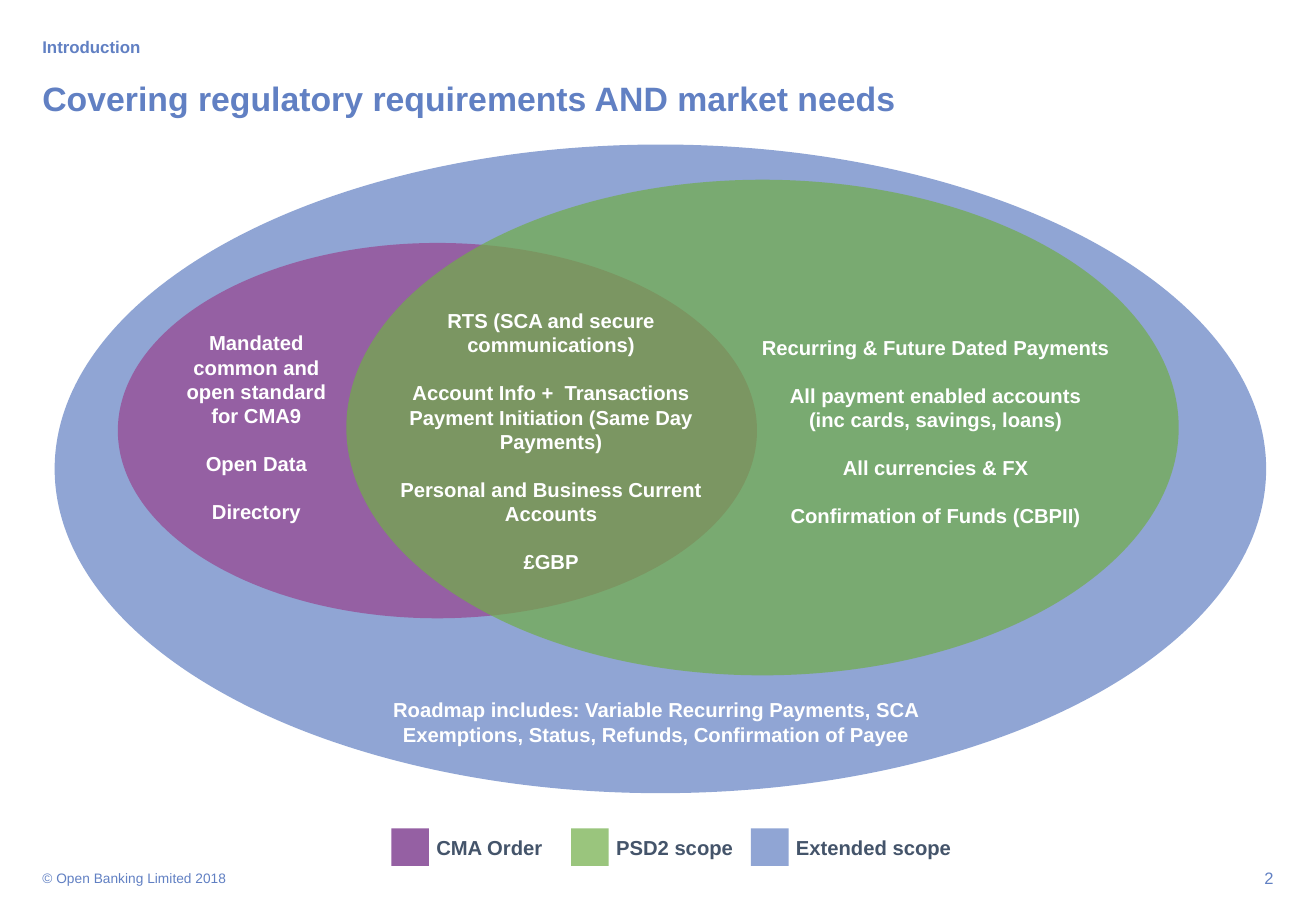
"""Build the slide on regulatory scope and market needs."""
import pptx
import pptx.dml.color
import pptx.enum.shapes
import pptx.enum.text
import pptx.oxml.ns
import pptx.oxml.xmlchemy
import pptx.util

Inches = pptx.util.Inches
Pt = pptx.util.Pt
Shape = pptx.enum.shapes.MSO_SHAPE
Align = pptx.enum.text.PP_ALIGN
Anchor = pptx.enum.text.MSO_ANCHOR

BLUE, PLUM, GREEN = "6180C3", "9560A3", "70AD47"
WHITE, SLATE = "FFFFFF", "44546A"
SCOPES = [
    ("CMA Order", PLUM, 100, (0.97, 2, 5.26, 3.09)),
    ("PSD2 scope", GREEN, 70, (2.85, 1.48, 6.85, 4.08)),
    ("Extended scope", BLUE, 70, (0.45, 1.19, 9.97, 5.34)),
]
NOTES = [
    ((1.37, 2.92, 1.48, 1.19), [
        ["Mandated common and open standard", "for CMA9"],
        ["Open Data"],
        ["Directory"],
    ]),
    ((2.99, 2.59, 3.09, 2.08), [
        ["RTS (SCA and secure communications)"],
        ["Account Info +  Transactions",
         "Payment Initiation (Same Day Payments)"],
        ["Personal and Business Current Accounts"],
        ["£GBP"],
    ]),
    ((6.21, 2.51, 2.98, 2.08), [
        ["Recurring & Future Dated Payments"],
        ["All payment enabled accounts", "(inc cards, savings, loans)"],
        ["All currencies & FX"],
        ["Confirmation of Funds (CBPII)"],
    ]),
    ((2.9, 5.56, 5, 0.77), [
        ["Roadmap includes: Variable Recurring Payments, SCA Exemptions, "
         "Status, Refunds, Confirmation of Payee"],
    ]),
]


def paint(code):
    """Return the colour for a hex string."""
    return pptx.dml.color.RGBColor.from_string(code)


def apply(item, values):
    """Set each value of a dict on an item."""
    for name, value in values.items():
        setattr(item, name, value)


def add_form(slide, kind, place, code, alpha):
    """Add a plain filled shape with an opacity in percent."""
    form = slide.shapes.add_shape(kind, *map(Inches, place))
    form.shadow.inherit = False
    form.line.fill.background()
    form.fill.solid()
    form.fill.fore_color.rgb = paint(code)
    if alpha < 100:
        tone = form._element.spPr.find(
            "/".join(map(pptx.oxml.ns.qn, ("a:solidFill", "a:srgbClr"))))
        node = pptx.oxml.xmlchemy.OxmlElement("a:alpha")
        node.set("val", str(alpha * 1000))
        tone.append(node)


def add_text(slide, place, groups, code, size=12, bold=True,
             align=Align.LEFT, anchor=Anchor.MIDDLE, inset=(0, 0), line=1):
    """Add a text box whose groups of lines are set apart by a gap."""
    frame = slide.shapes.add_textbox(*map(Inches, place)).text_frame
    side, edge = map(Inches, inset)
    apply(frame, {
        "word_wrap": True, "vertical_anchor": anchor,
        "margin_left": side, "margin_right": side,
        "margin_top": edge, "margin_bottom": edge,
    })
    lines = [(text, row > 0 and index == 0)
             for row, group in enumerate(groups)
             for index, text in enumerate(group)]
    for index, (text, gap) in enumerate(lines):
        para = frame.add_paragraph() if index else frame.paragraphs[0]
        apply(para, {"alignment": align, "line_spacing": line,
                     "space_before": Pt(14 if gap else 0)})
        run = para.add_run()
        run.text = text
        apply(run.font, {"name": "Arial", "size": Pt(size), "bold": bold})
        run.font.color.rgb = paint(code)


def add_key(slide):
    """Add the colour key below the diagram."""
    for index, (label, code, alpha, _) in enumerate(SCOPES):
        left = 3.22 + 1.48 * index
        add_form(slide, Shape.RECTANGLE, (left, 6.82, 0.31, 0.31), code, alpha)
        add_text(slide, (left + 0.37, 6.87, 1.35, 0.21), [[label]], SLATE)


def main():
    """Build and save the slide."""
    deck = pptx.Presentation()
    apply(deck, {"slide_width": Inches(10.83), "slide_height": Inches(7.5)})
    slide = deck.slides.add_slide(deck.slide_layouts[6])
    pad = (0.1, 0.05)
    add_text(slide, (0.25, 0.64, 10.33, 0.38),
             [["Covering regulatory requirements AND market needs"]],
             BLUE, 20, inset=pad, line=0.9)
    add_text(slide, (0.25, 0.27, 8.09, 0.29), [["Introduction"]],
             BLUE, 10, anchor=Anchor.TOP, inset=pad, line=0.9)
    order = [SCOPES[2], SCOPES[0], SCOPES[1]]
    for _, code, alpha, place in order:
        add_form(slide, Shape.OVAL, place, code, alpha)
    for place, groups in NOTES:
        add_text(slide, place, groups, WHITE, align=Align.CENTER)
    add_key(slide)
    add_text(slide, (0.25, 7.12, 2.12, 0.22),
             [["© Open Banking Limited 2018"]], BLUE, 8.1, False, inset=pad)
    add_text(slide, (10.1, 7.12, 0.48, 0.22), [["2"]], BLUE, 9.8, False,
             align=Align.RIGHT, inset=pad)
    deck.save("out.pptx")


if __name__ == "__main__":
    main()
